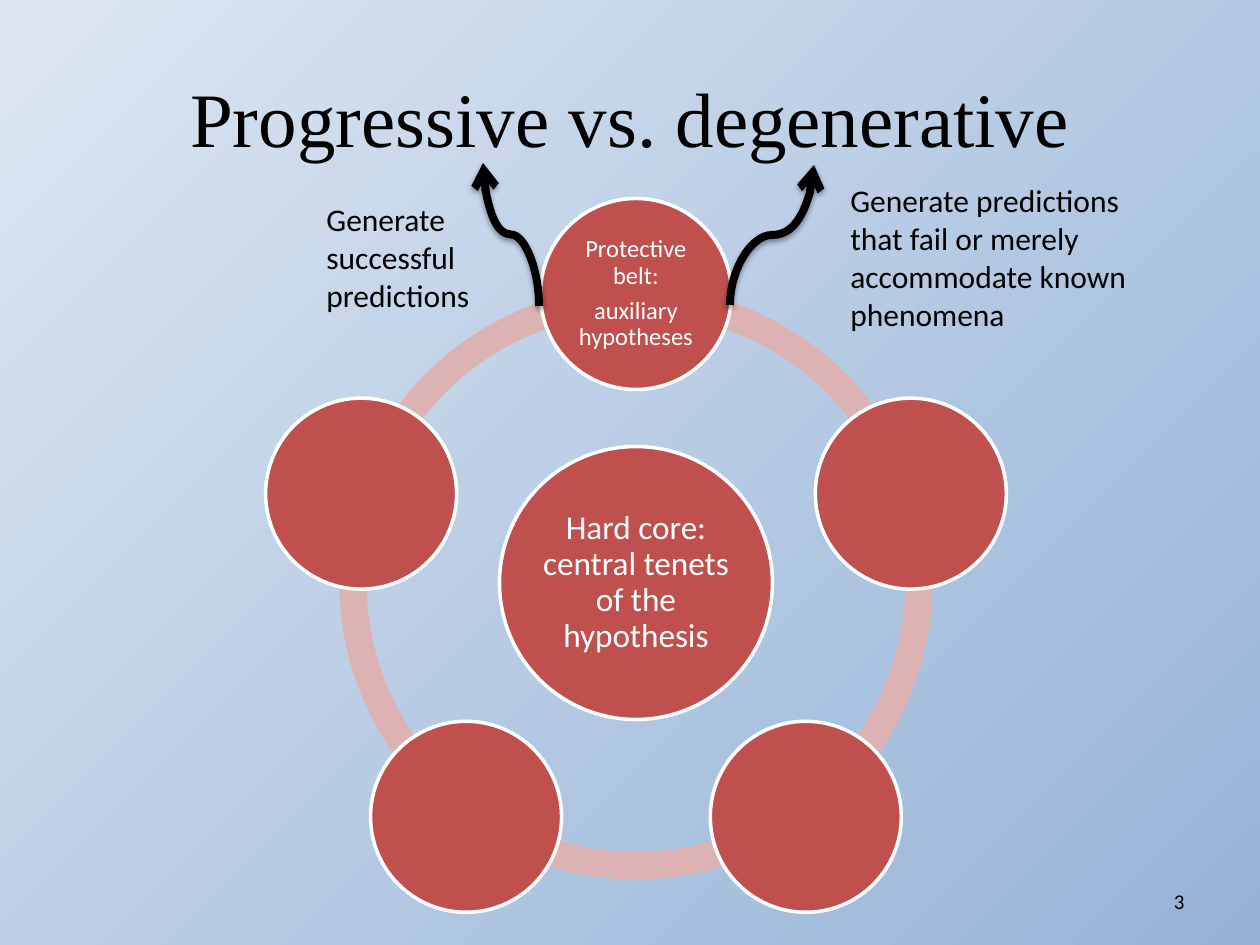
from math import cos, radians, sin

from lxml.etree import SubElement
from pptx import Presentation
from pptx.dml.color import RGBColor
from pptx.enum.shapes import MSO_CONNECTOR, MSO_SHAPE
from pptx.enum.text import MSO_ANCHOR, PP_ALIGN
from pptx.oxml.ns import qn
from pptx.util import Pt

TITLE = "Progressive vs. degenerative"
CORE = ["Hard core: central tenets of the hypothesis"]
BELT = [["Protective belt:", "auxiliary hypotheses"], [], [], [], []]  # clockwise from the top
OUTCOMES = [  # text, its box, arrow start, arrow end
    ("Generate successful predictions", (314, 194, 194, 127), (539, 306), (483, 163)),
    ("Generate predictions that fail or merely accommodate known phenomena",
     (838, 175, 325, 165), (730, 305), (814, 165)),
]
PAGE_NUMBER = "3"

BLACK = RGBColor(0x00, 0x00, 0x00)
WHITE = RGBColor(0xFF, 0xFF, 0xFF)
RED = RGBColor(0xC0, 0x50, 0x4D)
PINK = RGBColor(0xDC, 0xB3, 0xB2)
PALE_BLUE = RGBColor(0xDC, 0xE6, 0xF2)
MID_BLUE = RGBColor(0x95, 0xB3, 0xD7)

CENTER_X, CENTER_Y = 636, 583
ORBIT, RING_SIZE, CORE_SIZE, BELT_SIZE = 289, 593, 273, 191
RING_THICKNESS = 0.046
ANGLE_UNIT = 0.6  # one degree as an adjustment value


def px(*lengths):
    return [round(length * 914400 / 126) for length in lengths]


def square(x, y, size):
    """Box of a square centred on x, y."""
    return px(x - size / 2, y - size / 2, size, size)


def write(frame, paragraphs, size, color=BLACK, font="Calibri", align=PP_ALIGN.LEFT,
          anchor=MSO_ANCHOR.TOP, inset=None, line_spacing=None, after=None):
    frame.word_wrap = True
    frame.vertical_anchor = anchor
    if inset is not None:
        frame.margin_left = frame.margin_right = Pt(inset)
        frame.margin_top = frame.margin_bottom = Pt(inset)
    for index, text in enumerate(paragraphs):
        paragraph = frame.paragraphs[0] if index == 0 else frame.add_paragraph()
        paragraph.text = text
        paragraph.alignment = align
        paragraph.line_spacing = line_spacing
        if after is not None:
            paragraph.space_after = Pt(after)
        paragraph.font.size = Pt(size)
        paragraph.font.name = font
        paragraph.font.color.rgb = color


def add_ring_segment(shapes, start):
    arc = shapes.add_shape(MSO_SHAPE.BLOCK_ARC, *square(CENTER_X, CENTER_Y, RING_SIZE))
    arc.adjustments[0] = start % 360 * ANGLE_UNIT
    arc.adjustments[1] = (start + 72) % 360 * ANGLE_UNIT
    arc.adjustments[2] = RING_THICKNESS
    arc.fill.solid()
    arc.fill.fore_color.rgb = PINK
    arc.line.fill.background()
    arc.shadow.inherit = False


def add_circle(shapes, x, y, diameter, paragraphs, size, inset):
    circle = shapes.add_shape(MSO_SHAPE.OVAL, *square(x, y, diameter))
    circle.fill.solid()
    circle.fill.fore_color.rgb = RED
    circle.line.color.rgb = WHITE
    circle.line.width = Pt(2)
    circle.shadow.inherit = False
    write(circle.text_frame, paragraphs, size, WHITE, align=PP_ALIGN.CENTER,
          anchor=MSO_ANCHOR.MIDDLE, inset=inset, line_spacing=0.9, after=size * 0.35)


def add_rising_arrow(shapes, start, end):
    """Curved arrow that leaves and arrives vertically: a level one turned by 270 degrees."""
    (x1, y1), (x2, y2) = start, end
    mid_x, mid_y = (x1 + x2) / 2, (y1 + y2) / 2
    half_rise, half_shift = (y1 - y2) / 2, (x1 - x2) / 2
    arrow = shapes.add_connector(
        MSO_CONNECTOR.CURVE,
        *px(mid_x - half_rise, mid_y + half_shift, mid_x + half_rise, mid_y - half_shift))
    arrow.line.color.rgb = BLACK
    arrow.line.width = Pt(4.5)
    properties = arrow._element.spPr
    properties.find(qn("a:xfrm")).set("rot", str(270 * 60000))
    SubElement(properties.find(qn("a:ln")), qn("a:tailEnd"), type="arrow")
    effects = SubElement(properties, qn("a:effectLst"))
    shadow = SubElement(effects, qn("a:outerShdw"), blurRad="40000", dist="20000",
                        dir="5400000", rotWithShape="0")
    shade = SubElement(shadow, qn("a:srgbClr"), val=str(BLACK))
    SubElement(shade, qn("a:alpha"), val="38000")


def main():
    deck = Presentation()
    deck.slide_width, deck.slide_height = px(1260, 945)
    slide = deck.slides.add_slide(deck.slide_layouts[5])
    shapes = slide.shapes

    background = slide.background.fill
    background.gradient()
    background.gradient_angle = 315
    for stop, color, position in zip(background.gradient_stops, (PALE_BLUE, MID_BLUE), (0, 1)):
        stop.color.rgb = color
        stop.position = position

    title = shapes.title
    title.left, title.top, title.width, title.height = px(63, 38, 1134, 158)
    write(title.text_frame, [TITLE], 44, font="Times New Roman",
          align=PP_ALIGN.CENTER, anchor=MSO_ANCHOR.MIDDLE)

    number = shapes.add_textbox(*px(903, 876, 294, 50))
    write(number.text_frame, [PAGE_NUMBER], 12, align=PP_ALIGN.RIGHT, anchor=MSO_ANCHOR.MIDDLE)

    diagram = shapes.add_group_shape().shapes
    angles = [270 + 72 * index for index in range(len(BELT))]
    for angle in angles:
        add_ring_segment(diagram, angle)
    add_circle(diagram, CENTER_X, CENTER_Y, CORE_SIZE, CORE, 19, 2)
    for angle, paragraphs in zip(angles, BELT):
        x = CENTER_X + ORBIT * cos(radians(angle))
        y = CENTER_Y + ORBIT * sin(radians(angle))
        add_circle(diagram, x, y, BELT_SIZE, paragraphs, 14, 1.4)

    for text, box, start, end in OUTCOMES:
        add_rising_arrow(shapes, start, end)
        write(shapes.add_textbox(*px(*box)).text_frame, [text], 18)

    deck.save("out.pptx")


if __name__ == "__main__":
    main()
